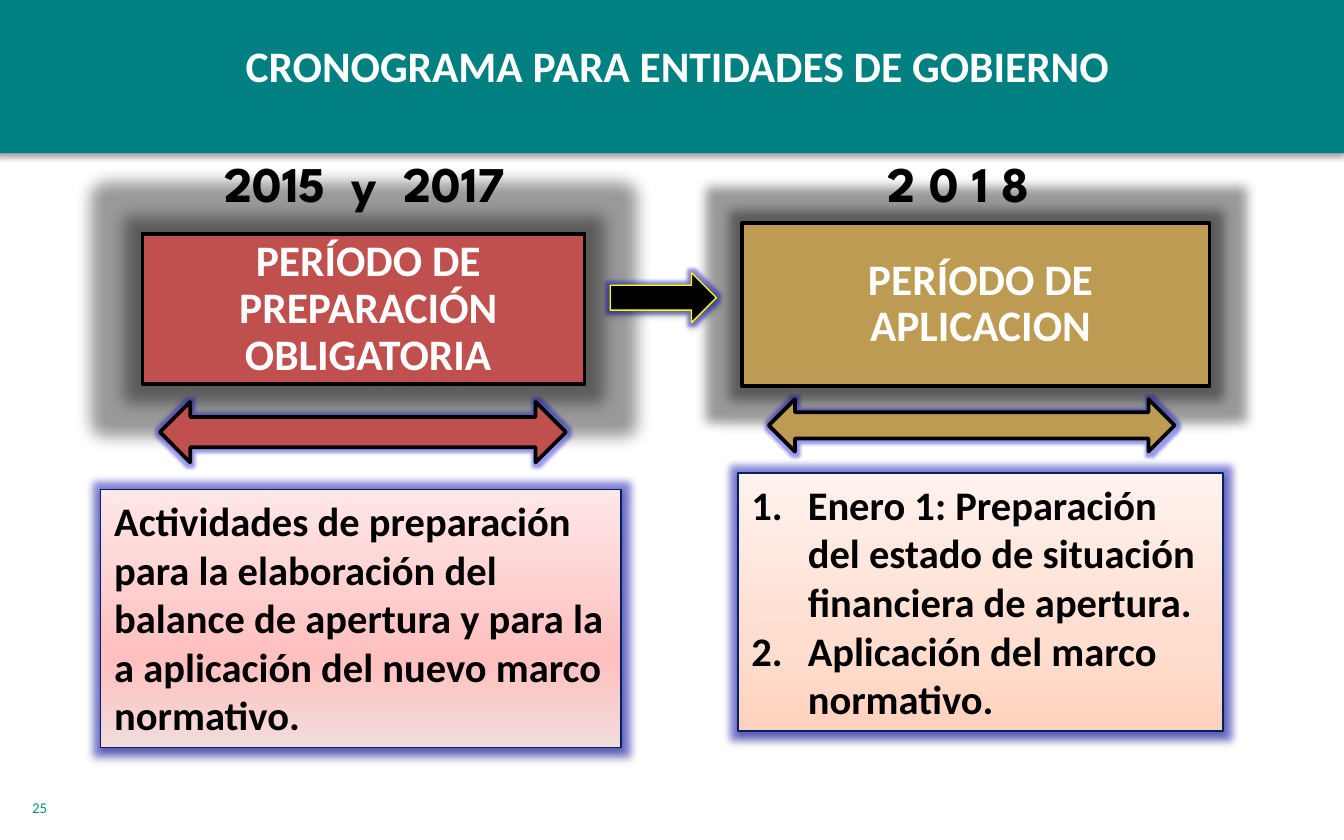
"""Builds a slide with the two-stage timetable for government entities."""
from lxml.etree import SubElement
from pptx import Presentation
from pptx.dml.color import RGBColor
from pptx.enum.shapes import MSO_SHAPE as SHAPE
from pptx.enum.text import MSO_ANCHOR as ANCHOR, MSO_AUTO_SIZE as AUTO, PP_ALIGN as ALIGN
from pptx.oxml.ns import qn
from pptx.util import Emu, Pt

PX = 9144
COLORS = {
    "teal": "008080", "number": "00918E", "red": "C0504D", "gold": "BD9B53",
    "black": "000000", "white": "FFFFFF", "navy": "002060", "yellow": "FFFF00",
    "blue": "0000CC",
}
PINK = [(0, "F2DCDB"), (35, "FFC0BF"), (100, "FFE7E7")]
PEACH = [(0, "FFD2BD"), (35, "FFDED0"), (100, "FFF2ED")]


def rgb(name):
    return RGBColor.from_string(COLORS[name])


def add(parent, tag, **attrs):
    return SubElement(parent, qn(tag), {k: str(v) for k, v in attrs.items()})


def add_color(parent, value, alpha=None):
    clr = add(parent, "a:srgbClr", val=value)
    if alpha:
        add(clr, "a:alpha", val=alpha * 1000)


class Deck:
    def __init__(self, width, height, font):
        self.prs = Presentation()
        self.prs.slide_width, self.prs.slide_height = Emu(width * PX), Emu(height * PX)
        self.s = self.prs.slides.add_slide(self.prs.slide_layouts[3])
        self.font = font

    def place(self, sp, box):
        sp.left, sp.top, sp.width, sp.height = (Emu(v * PX) for v in box)

    def effects(self, sp, glow=None, radius=0, shadow=0):
        sp.shadow.inherit = False
        lst = sp._element.spPr.find(qn("a:effectLst"))
        if glow:
            add_color(add(lst, "a:glow", rad=radius * PX), COLORS[glow], 40)
        if shadow:
            shdw = add(lst, "a:outerShdw", blurRad=40000, dist=20000, dir=5400000, rotWithShape=0)
            add_color(shdw, COLORS["black"], shadow)

    def fill_text(self, sp, lines, size, color="black", bold=True, align=ALIGN.LEFT,
                  spacing=1.0, font=None, number=False, anchor=ANCHOR.TOP):
        tf = sp.text_frame
        tf.auto_size, tf.word_wrap, tf.vertical_anchor = AUTO.NONE, True, anchor
        tf.text = "\n".join(lines)
        for p in tf.paragraphs:
            p.alignment, p.line_spacing = align, spacing
            p.space_before = p.space_after = Pt(0)
            pPr = p._p.get_or_add_pPr()
            indent = 42 * PX if number else 0
            pPr.set("marL", str(indent))
            pPr.set("indent", str(-indent))
            if number:
                add(pPr, "a:buFont", typeface="+mj-lt")
                add(pPr, "a:buAutoNum", type="arabicPeriod")
            else:
                add(pPr, "a:buNone")
            p.font.name, p.font.size, p.font.bold = font or self.font, Pt(size), bold
            p.font.color.rgb = rgb(color)

    def shape(self, kind, box, fill, line=None, width=2, **effects):
        sp = self.s.shapes.add_shape(kind, *(Emu(v * PX) for v in box))
        sp.fill.solid()
        sp.fill.fore_color.rgb = rgb(fill)
        if line:
            sp.line.color.rgb, sp.line.width = rgb(line), Pt(width)
        else:
            sp.line.fill.background()
        self.effects(sp, **effects)
        return sp

    def title(self, text, box):
        sp = self.s.shapes.title
        self.place(sp, box)
        self.fill_text(sp, [text], 23.3, "white", align=ALIGN.CENTER)
        return sp

    def band(self, box, title):
        sp = self.shape(SHAPE.RECTANGLE, box, "teal", shadow=38)
        title._element.addprevious(sp._element)

    def text(self, text, box, size, **style):
        sp = self.s.shapes.add_textbox(*(Emu(v * PX) for v in box))
        self.fill_text(sp, [text], size, **style)

    def period(self, text, box, fill, radius):
        sp = self.shape(SHAPE.RECTANGLE, box, fill, "black", glow="black", radius=radius)
        tf = sp.text_frame
        tf.margin_left, tf.margin_right = Emu(51 * PX), Emu(44 * PX)
        tf.margin_top = tf.margin_bottom = Emu(4 * PX)
        self.fill_text(sp, [text], 23.3, "white", align=ALIGN.CENTER, spacing=0.9,
                       anchor=ANCHOR.MIDDLE)

    def details(self, index, lines, box, stops, number=False):
        sp = self.s.placeholders[index]
        self.place(sp, box)
        sp.fill.gradient()
        grad = sp._element.spPr.find(qn("a:gradFill"))
        for child in list(grad):
            grad.remove(child)
        gs_list = add(grad, "a:gsLst")
        for pos, value in stops:
            add_color(add(gs_list, "a:gs", pos=pos * 1000), value)
        add(grad, "a:lin", ang=270 * 60000, scaled=1)
        sp.line.color.rgb, sp.line.width = rgb("navy"), Pt(0.75)
        self.effects(sp, glow="blue", radius=11, shadow=38)
        self.fill_text(sp, lines, 21.7, number=number)


def main():
    d = Deck(1000, 625, "Calibri")
    title = d.title("CRONOGRAMA PARA ENTIDADES DE GOBIERNO", (133, 24, 742, 49))
    d.band((-4, -2, 1004, 116), title)
    d.text("25", (14, 589, 208, 30), 8, color="number", bold=False)

    d.period("PERÍODO DE PREPARACIÓN OBLIGATORIA", (106, 174, 329, 112), "red", 25)
    d.period("PERÍODO DE APLICACION", (552, 166, 348, 121), "gold", 17)
    for text, box in (("2015  y  2017", (146, 109, 251, 55)), ("2 0 1 8", (638, 109, 151, 55))):
        d.text(text, box, 26.7, align=ALIGN.CENTER, font="League Spartan")

    d.details(1, ["Actividades de preparación para la elaboración del balance de apertura "
                  "y para la a aplicación del nuevo marco normativo."],
              (75, 364, 387, 192), PINK)
    d.details(2, ["Enero 1: Preparación del estado de situación financiera de apertura.",
                  "Aplicación del marco normativo."],
              (549, 352, 361, 192), PEACH, number=True)

    d.shape(SHAPE.RIGHT_ARROW, (454, 203, 79, 37), "black", "yellow", 0.75,
            glow="blue", radius=5, shadow=35)
    for box, fill in (((119, 299, 302, 45), "red"), ((572, 297, 302, 39), "gold")):
        d.shape(SHAPE.LEFT_RIGHT_ARROW, box, fill, "black", glow="blue", radius=5)
    d.prs.save("out.pptx")


if __name__ == "__main__":
    main()
